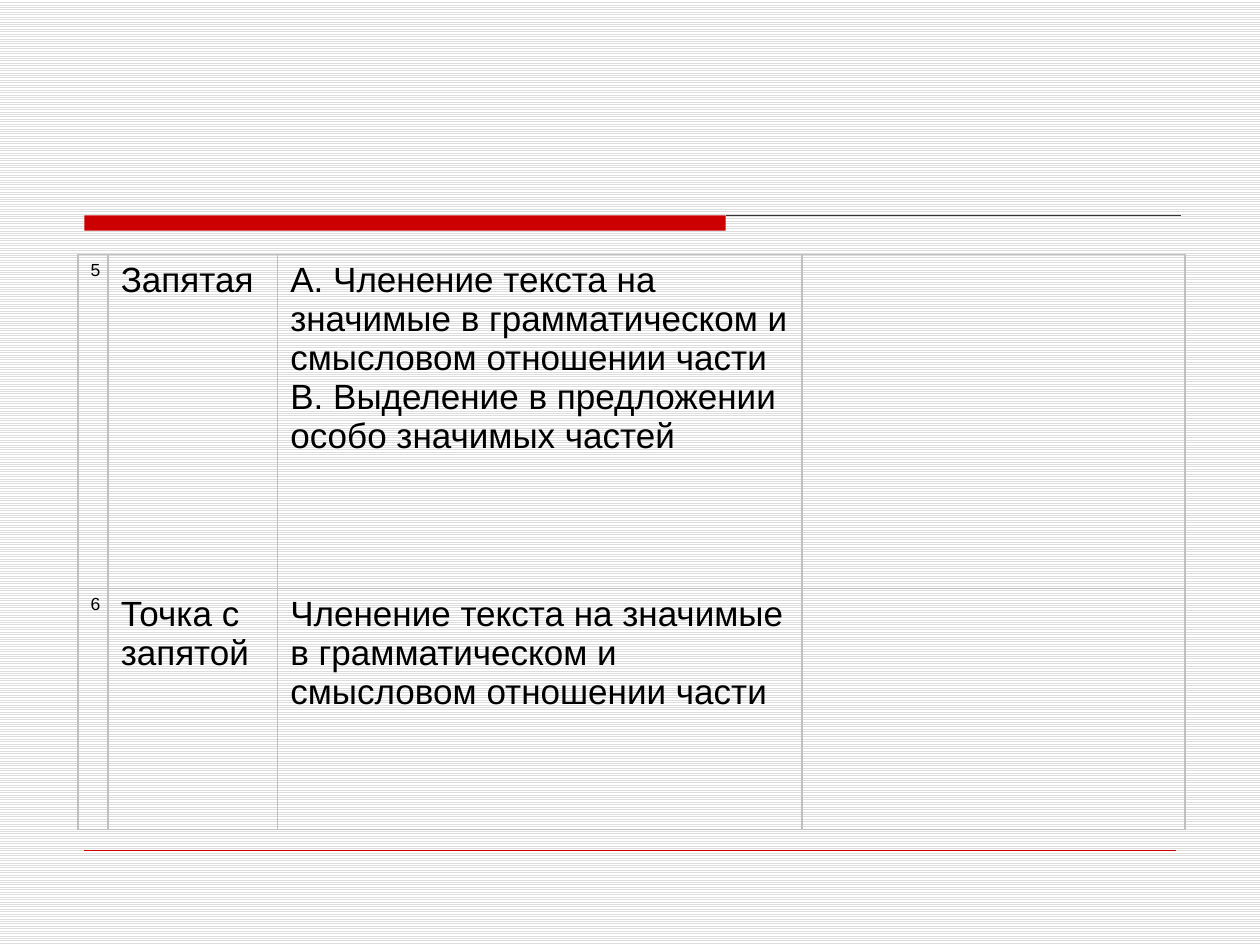
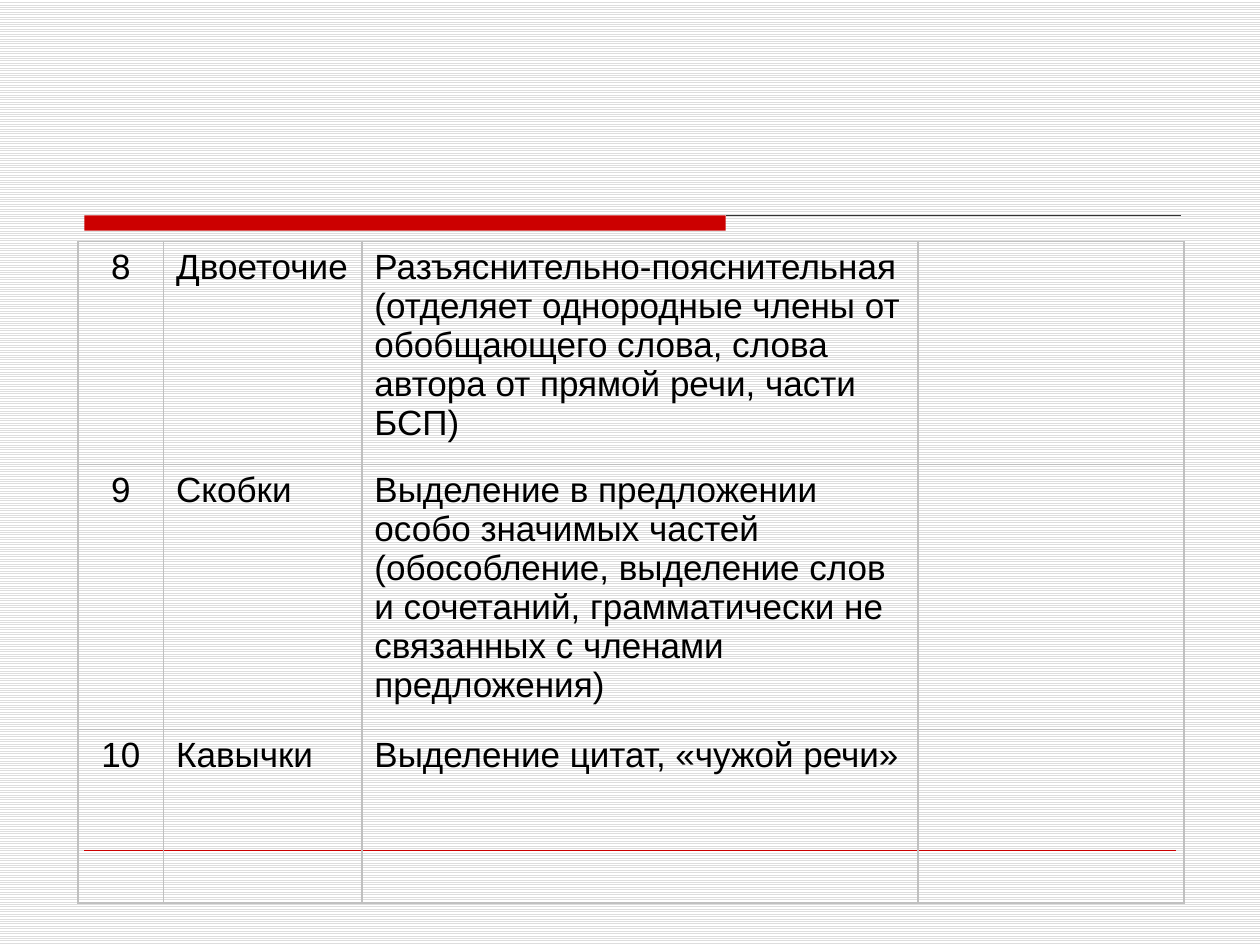
import pptx
import pptx.util
import pptx.dml.color
import pptx.enum.dml
import pptx.enum.shapes
import pptx.enum.text
import pptx.oxml
import pptx.oxml.ns

Pt = pptx.util.Pt
hues = {"red": "CC0000", "dark": "333333", "grid": "C0C0C0",
        "stripe": "DDDDDD", "paper": "FFFFFF", "ink": "000000"}
left = 48.24
tables = [
    {"top": 145.4, "cols": [16.9, 96.9, 299.6, 218.8], "rows": [190.8, 137.8], "size": 10,
     "text": [
         ["5", "Запятая",
          "A. Членение текста на значимые в грамматическом и смысловом отношении части\v"
          "B. Выделение в предложении особо значимых частей", ""],
         ["6", "Точка с запятой",
          "Членение текста на значимые в грамматическом и смысловом отношении части", ""]]},
    {"top": 138, "cols": [48.9, 113.3, 317.7, 152.2], "rows": [127.4, 151.4, 99.2], "size": 20,
     "text": [
         ["8", "Двоеточие",
          "Разъяснительно-пояснительная (отделяет однородные члены от обобщающего слова, "
          "слова автора от прямой речи, части БСП)", ""],
         ["9", "Скобки",
          "Выделение в предложении особо значимых частей (обособление, выделение слов "
          "и сочетаний, грамматически не связанных с членами предложения)", ""],
         ["10", "Кавычки", "Выделение цитат, «чужой речи»", ""]]},
]


def tint(name):
    return pptx.dml.color.RGBColor.from_string(hues[name])


def rule(slide, start, end, y, name, width):
    line = slide.shapes.add_connector(
        pptx.enum.shapes.MSO_CONNECTOR.STRAIGHT, Pt(start), Pt(y), Pt(end), Pt(y))
    line.line.color.rgb = tint(name)
    line.line.width = Pt(width)
    line._element.spPr.append(pptx.oxml.parse_xml(
        f'<a:effectLst {pptx.oxml.ns.nsdecls("a")}/>'))


deck = pptx.Presentation()
deck.slide_width = Pt(720)
deck.slide_height = Pt(540)

for data in tables:
    slide = deck.slides.add_slide(deck.slide_layouts[6])
    back = slide.background.fill
    back.patterned()
    back.pattern = pptx.enum.dml.MSO_PATTERN.LIGHT_HORIZONTAL
    back.fore_color.rgb = tint("stripe")
    back.back_color.rgb = tint("paper")

    band = slide.shapes.add_shape(
        pptx.enum.shapes.MSO_SHAPE.RECTANGLE, Pt(left), Pt(123.1), Pt(366.5), Pt(8.7))
    band.shadow.inherit = False
    band.fill.solid()
    band.fill.fore_color.rgb = tint("red")
    band.line.fill.background()
    rule(slide, left + 366.5, 674.8, 123.1, "dark", 0.75)
    rule(slide, left, 672, 486, "red", 0.25)

    frame = slide.shapes.add_table(
        len(data["rows"]), len(data["cols"]), Pt(44.6), Pt(data["top"]),
        Pt(sum(data["cols"])), Pt(sum(data["rows"])))
    table = frame.table
    table.first_row = False
    table.horz_banding = False
    for col, width in zip(table.columns, data["cols"]):
        col.width = Pt(width)
    for row, height, words in zip(table.rows, data["rows"], data["text"]):
        row.height = Pt(height)
        for spot, (cell, text) in enumerate(zip(row.cells, words)):
            cell.fill.background()
            for place, side in enumerate(["lnL", "lnR", "lnT", "lnB"]):
                cell._tc.get_or_add_tcPr().insert(place, pptx.oxml.parse_xml(
                    f'<a:{side} {pptx.oxml.ns.nsdecls("a")} w="12700"><a:solidFill>'
                    f'<a:srgbClr val="{hues["grid"]}"/></a:solidFill></a:{side}>'))
            cell.text_frame.text = text
            para = cell.text_frame.paragraphs[0]
            if spot == 0:
                para.alignment = pptx.enum.text.PP_ALIGN.CENTER
            for run in para.runs:
                run.font.name = "Arial"
                run.font.size = Pt(data["size"] if spot == 0 else 20)
                run.font.color.rgb = tint("ink")

deck.save("out.pptx")
